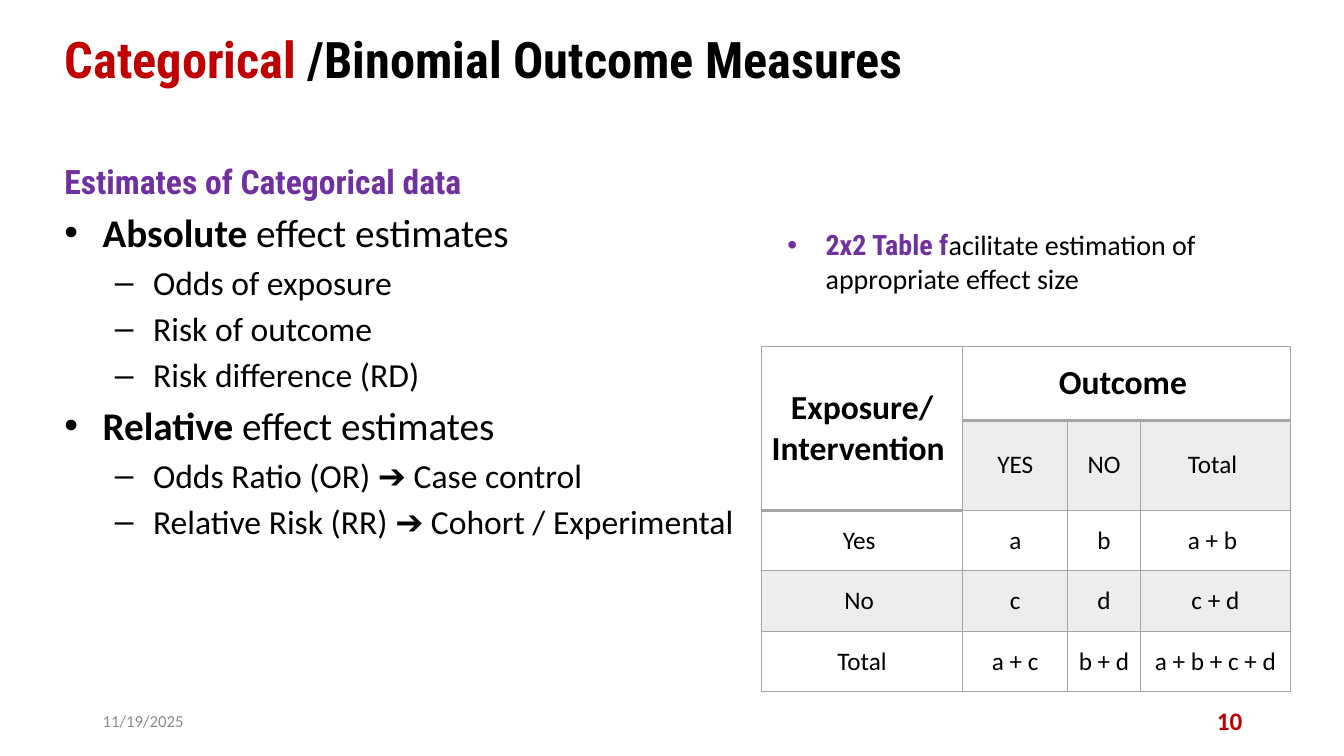
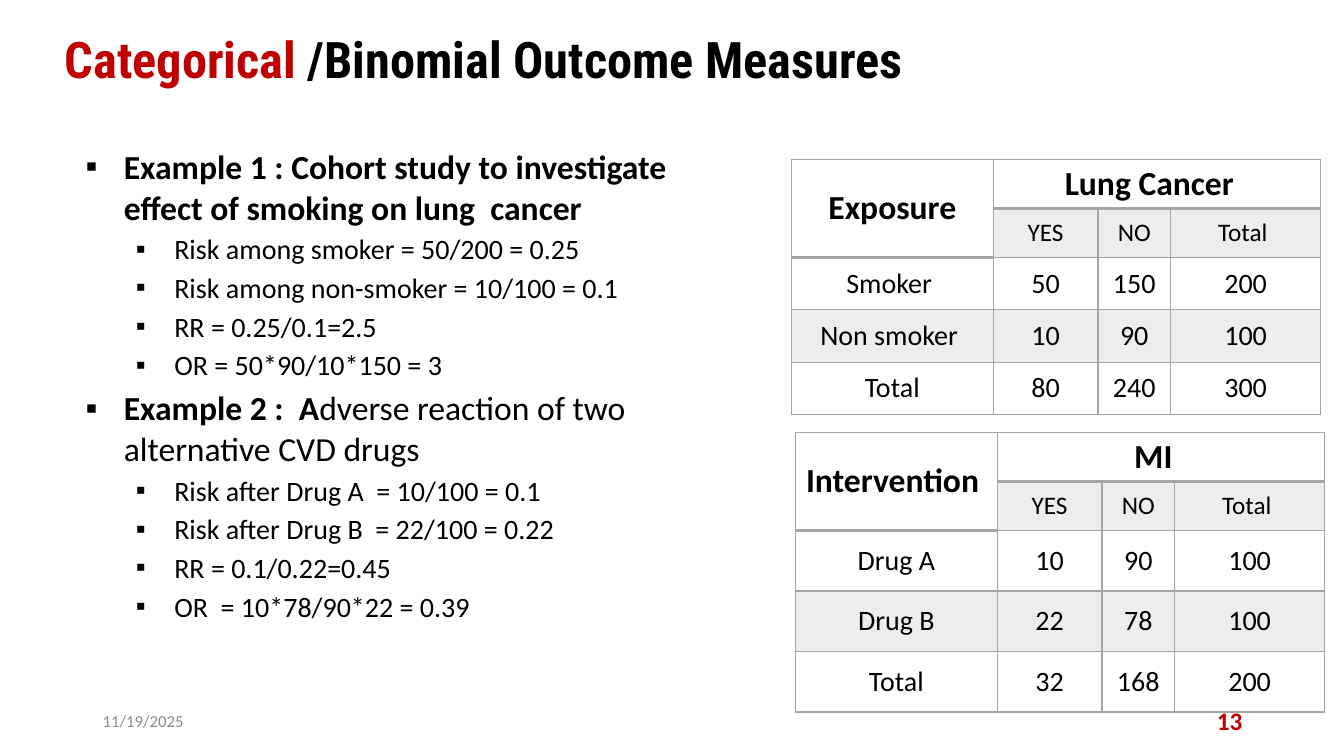
from lxml.etree import SubElement
from pptx import Presentation
from pptx.dml.color import RGBColor
from pptx.enum.text import MSO_ANCHOR, MSO_AUTO_SIZE, PP_ALIGN
from pptx.oxml.ns import qn
from pptx.util import Inches, Pt

RED, PURPLE, BLACK, GREY = "C00000", "7030A0", "000000", "8C8C8C"
BORDER, BAND, WHITE = "A5A5A5", "EDEDED", "FFFFFF"
BODY_FONT, HEAD_FONT = "Calibri", "Roboto Condensed"
COLUMN_WIDTHS = (2, 1.04, 0.72, 1.49)
HANGING = 0.38
INDENTS = {0: 0, 1: 0.38, 2: 0.88}
TITLE = (("Categorical", RED), (" /Binomial Outcome Measures", BLACK))
SUBHEADS = ("YES", "NO", "Total ")
DATE = "11/19/2025"

HEADING = {"bold": True, "color": PURPLE, "font": HEAD_FONT}
BOLD = {"bold": True}
PLAIN = {}

SLIDES = [
    {
        "number": "10",
        "texts": [
            {
                "box": (7.71, 2.21, 5.08, 0.77), "bullets": {1: "•"}, "sizes": {1: 20}, "gap": 0,
                "paragraphs": [
                    (1, [("2x2 Table f", HEADING),
                         ("acilitate estimation of appropriate effect size", PLAIN)]),
                ],
            },
            {
                "box": (0.54, 1.55, 6.91, 4.94), "bullets": {1: "•", 2: "–"},
                "sizes": {0: 24, 1: 28, 2: 24}, "gap": 0.18,
                "paragraphs": [
                    (0, [("Estimates of Categorical data", HEADING)]),
                    (1, [("Absolute", BOLD), (" effect estimates", PLAIN)]),
                    (2, [("Odds of exposure", PLAIN)]),
                    (2, [("Risk of outcome", PLAIN)]),
                    (2, [("Risk difference (RD)", PLAIN)]),
                    (1, [("Relative", BOLD), (" effect estimates", PLAIN)]),
                    (2, [("Odds Ratio (OR) ➔ Case control", PLAIN)]),
                    (2, [("Relative Risk (RR) ➔ Cohort / Experimental", PLAIN)]),
                ],
            },
        ],
        "tables": [
            {
                "corner": (7.55, 3.44), "heights": (0.73, 0.89, 0.6, 0.6, 0.6), "size": 18,
                "margins": (0.07, 0.04), "heads": ("Exposure/ Intervention ", "Outcome "),
                "rows": [
                    ("Yes ", "a", "b", "a + b "),
                    ("No ", "c", "d", "c + d"),
                    ("Total", "a + c", "b + d", "a + b + c + d"),
                ],
            },
        ],
    },
    {
        "number": "13",
        "texts": [
            {
                "box": (0.75, 1.4, 6.81, 5.52), "bullets": {1: "▪", 2: "▪"},
                "sizes": {1: 24, 2: 20}, "gap": 0.18,
                "paragraphs": [
                    (1, [("Example 1 : Cohort study to investigate effect of smoking on lung  cancer", BOLD)]),
                    (2, [("Risk among smoker = 50/200 = 0.25", PLAIN)]),
                    (2, [("Risk among non-smoker = 10/100 = 0.1", PLAIN)]),
                    (2, [("RR = 0.25/0.1=2.5", PLAIN)]),
                    (2, [("OR = 50*90/10*150 = 3", PLAIN)]),
                    (1, [("Example 2 :  A", BOLD),
                         ("dverse reaction of two alternative CVD drugs", PLAIN)]),
                    (2, [("Risk after Drug A  = 10/100 = 0.1", PLAIN)]),
                    (2, [("Risk after Drug B  = 22/100 = 0.22", PLAIN)]),
                    (2, [("RR = 0.1/0.22=0.45", PLAIN)]),
                    (2, [("OR  = 10*78/90*22 = 0.39", PLAIN)]),
                ],
            },
        ],
        "tables": [
            {
                "corner": (7.85, 1.58), "heights": (0.48, 0.48, 0.52, 0.52, 0.52), "size": 20,
                "margins": (0.05, 0.02), "heads": ("Exposure", "Lung Cancer  "),
                "rows": [
                    ("Smoker ", "50", "150", "200"),
                    ("Non smoker ", "10", "90", "100"),
                    ("Total", "80", "240", "300"),
                ],
            },
            {
                "corner": (7.89, 4.29), "heights": (0.48, 0.48, 0.6, 0.6, 0.6), "size": 20,
                "margins": (0.05, 0.02), "heads": ("Intervention ", "MI  "),
                "rows": [
                    ("Drug A", "10", "90", "100"),
                    ("Drug B", "22", "78", "100"),
                    ("Total", "32", "168", "200"),
                ],
            },
        ],
    },
]


def rgb(value):
    return RGBColor.from_string(value)


def add_run(paragraph, text, size, color=BLACK, bold=False, font=BODY_FONT):
    run = paragraph.add_run()
    run.text = text
    run.font.size = Pt(size)
    run.font.name = font
    run.font.bold = bold
    run.font.color.rgb = rgb(color)


def add_text_box(slide, box, anchor=MSO_ANCHOR.TOP):
    frame = slide.shapes.add_textbox(*map(Inches, box)).text_frame
    frame.word_wrap = True
    frame.vertical_anchor = anchor
    return frame


def add_title(slide):
    title = slide.shapes.title
    title.left, title.top, title.width, title.height = map(Inches, (0.54, 0.15, 12.42, 0.93))
    frame = title.text_frame
    frame.auto_size = MSO_AUTO_SIZE.NONE
    frame.vertical_anchor = MSO_ANCHOR.MIDDLE
    paragraph = frame.paragraphs[0]
    paragraph.alignment = PP_ALIGN.LEFT
    paragraph.line_spacing = 0.9
    for text, color in TITLE:
        add_run(paragraph, text, 36, color, True, HEAD_FONT)


def add_footer(slide, number):
    footers = (
        (0.92, PP_ALIGN.LEFT, DATE, 12, GREY, False),
        (9.42, PP_ALIGN.RIGHT, number, 18, RED, True),
    )
    for left, alignment, text, size, color, bold in footers:
        frame = add_text_box(slide, (left, 6.95, 3, 0.4), MSO_ANCHOR.MIDDLE)
        frame.paragraphs[0].alignment = alignment
        add_run(frame.paragraphs[0], text, size, color, bold)


def set_bullet(paragraph, level, character):
    properties = paragraph._p.get_or_add_pPr()
    properties.set("marL", str(Inches(INDENTS[level])))
    properties.set("indent", str(-Inches(HANGING)))
    SubElement(properties, qn("a:buFont"), typeface="Arial")
    SubElement(properties, qn("a:buChar"), char=character)


def add_bullets(slide, content):
    frame = add_text_box(slide, content["box"])
    for index, (level, runs) in enumerate(content["paragraphs"]):
        paragraph = frame.add_paragraph() if index else frame.paragraphs[0]
        size = content["sizes"][level]
        paragraph.space_before = Pt(round(size * content["gap"], 1))
        if level in content["bullets"]:
            set_bullet(paragraph, level, content["bullets"][level])
        for text, style in runs:
            add_run(paragraph, text, size, **style)


def set_borders(cell, bottom_width):
    properties = cell._tc.get_or_add_tcPr()
    for side, width in (("L", 1), ("R", 1), ("T", 1), ("B", bottom_width)):
        line = SubElement(properties, qn(f"a:ln{side}"), w=str(Pt(width)))
        fill = SubElement(line, qn("a:solidFill"))
        SubElement(fill, qn("a:srgbClr"), val=BORDER)


def format_cell(cell, text, size, margins, bold, banded):
    cell.margin_left = cell.margin_right = Inches(margins[0])
    cell.margin_top = cell.margin_bottom = Inches(margins[1])
    cell.vertical_anchor = MSO_ANCHOR.MIDDLE
    set_borders(cell, 2 if bold else 1)
    cell.fill.solid()
    cell.fill.fore_color.rgb = rgb(BAND if banded else WHITE)
    if text:
        paragraph = cell.text_frame.paragraphs[0]
        paragraph.alignment = PP_ALIGN.CENTER
        add_run(paragraph, text, size, bold=bold)


def add_two_by_two(slide, content):
    exposure, outcome = content["heads"]
    rows = [(exposure, outcome, "", ""), ("", *SUBHEADS), *content["rows"]]
    heights = content["heights"]
    frame = slide.shapes.add_table(
        len(rows), len(COLUMN_WIDTHS), *map(Inches, content["corner"]),
        Inches(sum(COLUMN_WIDTHS)), Inches(sum(heights)))
    table = frame.table
    table.first_row = table.horz_banding = False
    for column, width in zip(table.columns, COLUMN_WIDTHS):
        column.width = Inches(width)
    for row, height in zip(table.rows, heights):
        row.height = Inches(height)
    table.cell(0, 0).merge(table.cell(1, 0))
    table.cell(0, 1).merge(table.cell(0, 3))
    for row_index, texts in enumerate(rows):
        for column_index, text in enumerate(texts):
            is_head = row_index == 0 or (row_index == 1 and column_index == 0)
            size = 24 if is_head else 18 if row_index == 1 else content["size"]
            margins = (0.07, 0.04) if row_index < 2 else content["margins"]
            banded = row_index % 2 == 1 and not is_head
            format_cell(table.cell(row_index, column_index), text, size, margins, is_head, banded)


def main():
    presentation = Presentation()
    presentation.slide_width, presentation.slide_height = Inches(13.33), Inches(7.5)
    for content in SLIDES:
        slide = presentation.slides.add_slide(presentation.slide_layouts[5])
        add_title(slide)
        for table in content["tables"]:
            add_two_by_two(slide, table)
        for text in content["texts"]:
            add_bullets(slide, text)
        add_footer(slide, content["number"])
    presentation.save("out.pptx")


if __name__ == "__main__":
    main()
